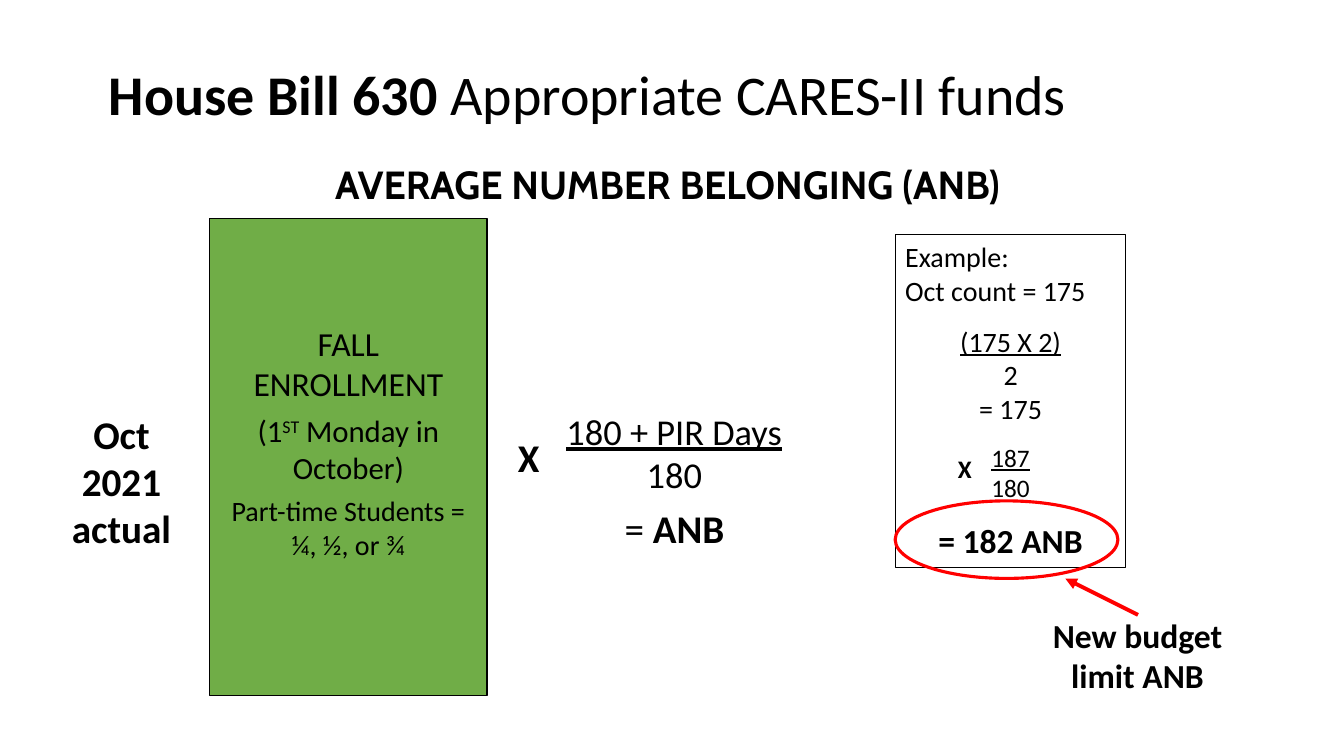
"""Build the House Bill 630 slide explaining the Average Number Belonging (ANB) formula."""
import pptx
import pptx.dml.color
import pptx.enum.shapes
import pptx.enum.text
import pptx.util
from lxml import etree
from pptx.oxml.ns import qn

Pt = pptx.util.Pt
ALIGN = pptx.enum.text.PP_ALIGN
SHAPE = pptx.enum.shapes.MSO_SHAPE
BLACK = pptx.dml.color.RGBColor(0x00, 0x00, 0x00)
GREEN = pptx.dml.color.RGBColor(0x70, 0xAD, 0x47)
RED = pptx.dml.color.RGBColor(0xFF, 0x00, 0x00)


def write_paragraph(paragraph, pieces, size, font="Calibri", align=ALIGN.CENTER, before=0, after=0):
    paragraph.alignment = align
    paragraph.space_before, paragraph.space_after = Pt(before), Pt(after)
    for text, style in pieces:
        run = paragraph.add_run()
        run.text = text
        run.font.name, run.font.size = font, Pt(size)
        run.font.color.rgb = BLACK
        run.font.bold = style == "bold"
        run.font.underline = style == "underline"
        if style == "superscript":
            run.font._element.set("baseline", "30000")


def add_block(shape, paragraphs, margin_top=3.6):
    text_frame = shape.text_frame
    text_frame.word_wrap = True
    text_frame.vertical_anchor = pptx.enum.text.MSO_ANCHOR.TOP
    text_frame.margin_top = Pt(margin_top)
    for index, (pieces, size, options) in enumerate(paragraphs):
        paragraph = text_frame.add_paragraph() if index else text_frame.paragraphs[0]
        write_paragraph(paragraph, pieces, size, **options)


presentation = pptx.Presentation()
presentation.slide_width, presentation.slide_height = Pt(960), Pt(540)
slide = presentation.slides.add_slide(presentation.slide_layouts[5])
shapes = slide.shapes

title = shapes.title
title.left, title.top, title.width, title.height = Pt(70.6), Pt(35.3), Pt(733), Pt(68.4)
title.text_frame.vertical_anchor = pptx.enum.text.MSO_ANCHOR.MIDDLE
title_paragraph = title.text_frame.paragraphs[0]
write_paragraph(title_paragraph, [("House Bill 630 ", "bold"), ("Appropriate CARES-II funds", "")],
                40, align=ALIGN.LEFT)
title_paragraph.line_spacing = 0.9

outlined = []
for preset, left, top, width, height, fill, line, weight in [
    (SHAPE.RECTANGLE, 149.8, 156.2, 198, 340.6, GREEN, BLACK, 1),
    (SHAPE.RECTANGLE, 639.4, 167.8, 164.9, 237.6, None, BLACK, 0.75),
    (SHAPE.OVAL, 639.4, 357.8, 159.1, 55.4, None, RED, 2.25),
]:
    shape = shapes.add_shape(preset, Pt(left), Pt(top), Pt(width), Pt(height))
    shape.shadow.inherit = False
    if fill is None:
        shape.fill.background()
    else:
        shape.fill.solid()
        shape.fill.fore_color.rgb = fill
    shape.line.color.rgb = line
    shape.line.width = Pt(weight)
    outlined.append(shape)
enrollment, example, highlight = outlined

add_block(enrollment, [
    ([("FALL ENROLLMENT", "")], 24, {"after": 6}),
    ([("(1", ""), ("ST", "superscript"), (" Monday in October)", "")], 22, {"after": 6}),
    ([("Part-time Students = ¼, ½, or ¾", "")], 20, {"after": 6}),
], margin_top=74.2)

add_block(example, [
    ([("Example:", "")], 20, {"align": ALIGN.LEFT}),
    ([("Oct count = 175", "")], 20, {"align": ALIGN.LEFT}),
    ([("(175 X 2)", "underline")], 20, {"before": 12.2}),
    ([("2", "")], 20, {}),
    ([("= 175", "")], 20, {}),
    ([("187", "underline")], 18, {"before": 12.2}),
    ([("180", "")], 18, {}),
    ([("= 182 ANB", "bold")], 24, {"before": 12.2}),
])

formula = shapes.add_textbox(Pt(351.4), Pt(222.5), Pt(260.6), Pt(187.9))
add_block(formula, [
    ([("180 + PIR Days", "underline")], 26, {}),
    ([("180", "")], 26, {"after": 6}),
    ([("= ", ""), ("ANB", "bold")], 28, {}),
], margin_top=69.5)

for text, left, top, width, height, size, font in [
    ("AVERAGE NUMBER BELONGING (ANB)", 149.8, 110.9, 653.8, 41, 28, "Cabin"),
    ("X", 362.9, 306, 23.8, 41, 28, "Calibri"),
    ("X", 675.4, 320.4, 27.4, 28.8, 18, "Calibri"),
    ("Oct 2021 actual", 29.5, 289.4, 114.5, 108.7, 28, "Calibri"),
    ("New budget limit ANB", 740.9, 435.6, 143.3, 65.5, 24, "Calibri"),
]:
    label = shapes.add_textbox(Pt(left), Pt(top), Pt(width), Pt(height))
    add_block(label, [([(text, "bold")], size, {"font": font})])

arrow = shapes.add_connector(pptx.enum.shapes.MSO_CONNECTOR.STRAIGHT,
                             Pt(812.9), Pt(439.2), Pt(761), Pt(413.3))
arrow.line.color.rgb = RED
arrow.line.width = Pt(2.75)
etree.SubElement(arrow.line._get_or_add_ln(), qn("a:tailEnd"), type="triangle")
etree.SubElement(arrow._element.spPr, qn("a:effectLst"))

presentation.save("out.pptx")
